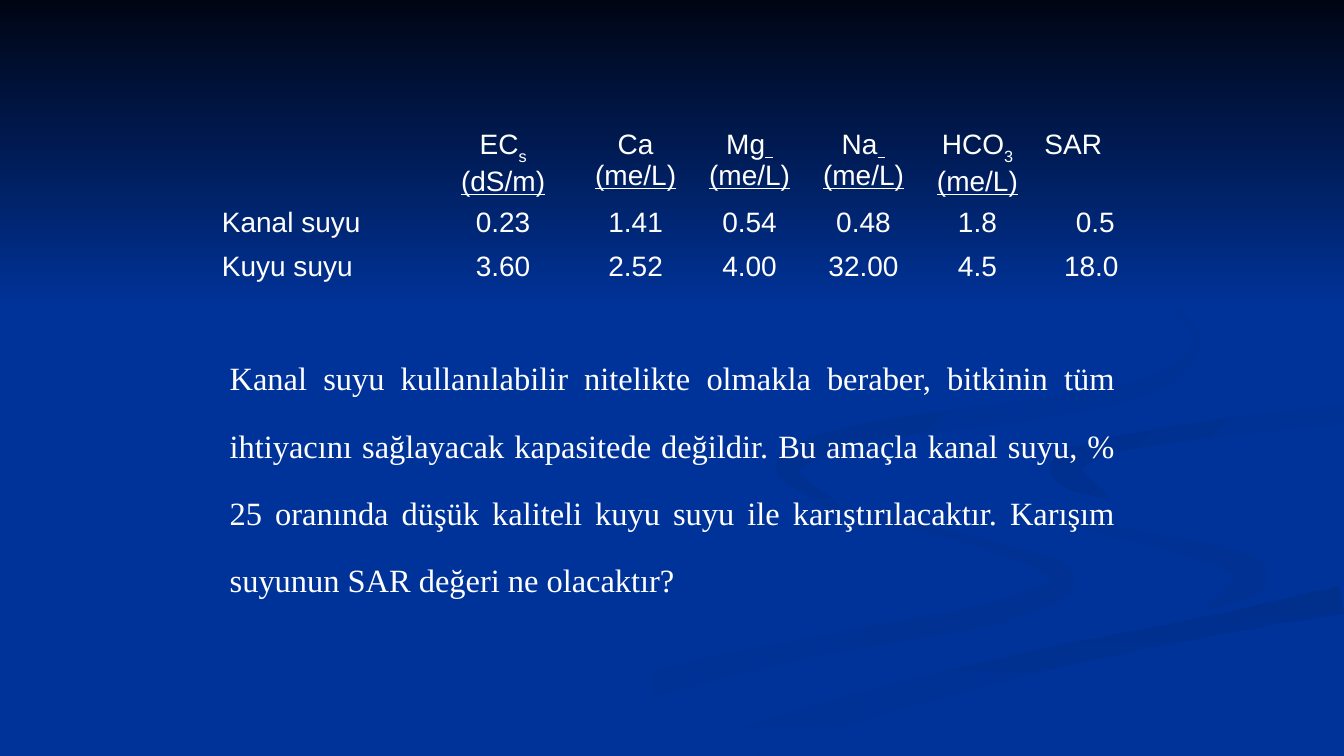
"""Build a slide with a water quality table and a mixing question."""
from dataclasses import dataclass
from math import hypot

from pptx import Presentation
from pptx.dml.color import RGBColor
from pptx.enum.shapes import MSO_SHAPE
from pptx.enum.text import MSO_AUTO_SIZE, PP_ALIGN
from pptx.oxml.ns import qn
from pptx.util import Inches, Pt

LEFT, CENTER, JUSTIFY = PP_ALIGN.LEFT, PP_ALIGN.CENTER, PP_ALIGN.JUSTIFY
RECTANGLE = MSO_SHAPE.RECTANGLE
FIT_SHAPE = MSO_AUTO_SIZE.SHAPE_TO_FIT_TEXT
NO_GRID_STYLE = "{2D5ABB26-0587-4C30-8999-92F81FD0307C}"


@dataclass(frozen=True)
class Theme:
    water: str = "003399"
    shade: str = "003193"
    deep_shade: str = "002F8C"
    night: str = "000514"
    text: str = "FFFFFF"
    table_font: str = "Arial"
    body_font: str = "Times New Roman"
    table_size: int = 20
    body_size: int = 40
    raised: int = 30000
    lowered: int = -30000


@dataclass(frozen=True)
class Stream:
    """A ribbon through knots of (x, y, thickness) in inches."""
    knots: tuple
    start_color: str
    end_color: str
    angle: int


THEME = Theme()

UNITS = "(me/L)"
HEADERS = [
    ("", "", ""),
    ("EC", "s", "(dS/m)"),
    ("Ca", "", UNITS),
    ("Mg", " ", UNITS),
    ("Na", " ", UNITS),
    ("HCO", "3", UNITS),
    ("SAR", "", ""),
]
SAMPLES = [
    ("Kanal suyu", "0.23", "1.41", "0.54", "0.48", "1.8", " 0.5"),
    ("Kuyu suyu", "3.60", "2.52", "4.00", "32.00", "4.5", "18.0"),
]
QUESTION = (
    "Kanal suyu kullanılabilir nitelikte olmakla beraber, bitkinin tüm "
    "ihtiyacını sağlayacak kapasitede değildir. Bu amaçla kanal suyu, % 25 "
    "oranında düşük kaliteli kuyu suyu ile karıştırılacaktır. Karışım "
    "suyunun SAR değeri ne olacaktır?"
)

SLIDE_WIDTH, SLIDE_HEIGHT = 13.33, 7.5
SKY_SHARE = 0.41
COLUMN_WIDTHS = [2.14, 1.5] + [1.13] * 5
ROW_HEIGHTS = [0.77] + [0.43] * 2
TABLE_ORIGIN = (2.1, 1.23)
QUESTION_BOX = (2.18, 3.44, 8.98, 1.9)

LEFT_TO_RIGHT, DIAGONAL, DOWNWARD = 0, 315, 270
STEPS_PER_KNOT = 8
UNITS_PER_INCH = 100

STREAMS = {
    "main": Stream(
        ((13.32, 3.95, 0.15), (11.4, 4.18, 0.13), (10.1, 4.6, 0.7),
         (11.3, 5.13, 0.25), (12.94, 5.6, 0.7), (12, 6.1, 0.1),
         (9.4, 6.6, 0.12), (6.6, 7.45, 0.2)),
        THEME.water, THEME.water, LEFT_TO_RIGHT),
    "lower": Stream(
        ((7.65, 4.62, 0.02), (8.2, 5, 0.06), (9.6, 5.35, 0.08),
         (10.56, 5.72, 0.2), (9.9, 6.07, 0.22), (8.2, 6.39, 0.2),
         (6.65, 6.74, 0.26), (4.41, 7.38, 0.3)),
        THEME.water, THEME.shade, LEFT_TO_RIGHT),
    "right bend": Stream(
        ((9.65, 4.66, 0.02), (10.08, 5.01, 0.06), (11.1, 5.28, 0.13),
         (12.1, 5.52, 0.2), (12.4, 5.75, 0.33), (11.97, 6.04, 0.02)),
        THEME.water, THEME.shade, DIAGONAL),
    "bottom": Stream(
        ((7.17, 7.46, 0.35), (8.4, 7.05, 0.27), (10.2, 6.58, 0.22),
         (12, 6.21, 0.2), (13.31, 5.95, 0.28)),
        THEME.deep_shade, THEME.water, DOWNWARD),
    "upper branch": Stream(
        ((13.31, 4.11, 0.18), (12, 4.26, 0.17), (10.95, 4.44, 0.16),
         (10.57, 4.66, 0.3), (11.01, 4.95, 0.01)),
        THEME.deep_shade, THEME.water, DIAGONAL),
    "spring": Stream(
        ((10.17, 2.33, 0.01), (11.26, 2.77, 0.06), (11.87, 3.36, 0.07),
         (11.4, 3.82, 0.16), (10.2, 4.07, 0.2), (8.6, 4.29, 0.18),
         (7.8, 4.63, 0.22), (8.29, 4.99, 0.01)),
        THEME.deep_shade, THEME.water, DIAGONAL),
}


def color_of(value):
    return RGBColor.from_string(value)


def blend(before, start, end, after, share):
    """Return the Catmull-Rom value between start and end."""
    slope = end - before
    bend = 2 * before - 5 * start + 4 * end - after
    twist = 3 * (start - end) + after - before
    return start + share * (slope + share * (bend + share * twist)) / 2


def smooth(knots):
    """Return evenly stepped points on a curve through all knots."""
    padded = (knots[0], *knots, knots[-1])
    points = [
        tuple(blend(*values, step / STEPS_PER_KNOT) for values in zip(*window))
        for window in zip(padded, padded[1:], padded[2:], padded[3:])
        for step in range(STEPS_PER_KNOT)
    ]
    return points + [knots[-1]]


def ribbon_outline(knots):
    """Return both banks of a ribbon as one closed outline inside the slide."""
    points = smooth(knots)
    neighbours = zip([points[0]] + points, points, points[1:] + [points[-1]])
    left_bank, right_bank = [], []
    for before, (x, y, thickness), after in neighbours:
        run, rise = after[0] - before[0], after[1] - before[1]
        reach = thickness / 2 / hypot(run, rise)
        for bank, side in ((left_bank, reach), (right_bank, -reach)):
            bank_x = min(x + rise * side, SLIDE_WIDTH)
            bank_y = min(y - run * side, SLIDE_HEIGHT)
            bank.append((bank_x * UNITS_PER_INCH, bank_y * UNITS_PER_INCH))
    return left_bank + right_bank[::-1]


def paint(shape, start_color, end_color, angle):
    shape.shadow.inherit = False
    shape.line.fill.background()
    shape.fill.gradient()
    shape.fill.gradient_angle = angle
    for stop, color in zip(shape.fill.gradient_stops, (start_color, end_color)):
        stop.color.rgb = color_of(color)


def draw_backdrop(slide):
    slide.background.fill.solid()
    slide.background.fill.fore_color.rgb = color_of(THEME.water)
    for stream in STREAMS.values():
        first, *others = ribbon_outline(stream.knots)
        builder = slide.shapes.build_freeform(*first, scale=Inches(1) / UNITS_PER_INCH)
        builder.add_line_segments(others, close=True)
        paint(builder.convert_to_shape(), stream.start_color, stream.end_color, stream.angle)
    sky_size = map(Inches, (SLIDE_WIDTH, SLIDE_HEIGHT * SKY_SHARE))
    sky = slide.shapes.add_shape(RECTANGLE, 0, 0, *sky_size)
    paint(sky, THEME.night, THEME.water, DOWNWARD)


def add_run(paragraph, text, font_name, size, baseline=0, underline=False):
    run = paragraph.add_run()
    run.text = text
    run.font.name = font_name
    run.font.size = Pt(size)
    run.font.underline = underline
    run.font.color.rgb = color_of(THEME.text)
    if baseline:
        run._r.get_or_add_rPr().set("baseline", str(baseline))


def add_table_run(paragraph, text, **style):
    add_run(paragraph, text, THEME.table_font, THEME.table_size, **style)


def fill_header(cell, name, suffix, unit):
    paragraph = cell.text_frame.paragraphs[0]
    paragraph.alignment = CENTER if unit else LEFT
    if name:
        add_table_run(paragraph, name)
    if suffix.strip():
        add_table_run(paragraph, suffix, baseline=THEME.lowered)
    elif suffix:
        add_table_run(paragraph, suffix, underline=True)
    if unit:
        unit_paragraph = cell.text_frame.add_paragraph()
        unit_paragraph.alignment = CENTER
        add_table_run(unit_paragraph, unit, underline=True)


def draw_table(slide):
    box = map(Inches, (*TABLE_ORIGIN, sum(COLUMN_WIDTHS), sum(ROW_HEIGHTS)))
    table = slide.shapes.add_table(len(ROW_HEIGHTS), len(COLUMN_WIDTHS), *box).table
    table.first_row = table.horz_banding = False
    table._tbl.tblPr.find(qn("a:tableStyleId")).text = NO_GRID_STYLE
    for column, width in zip(table.columns, COLUMN_WIDTHS):
        column.width = Inches(width)
    for row, height in zip(table.rows, ROW_HEIGHTS):
        row.height = Inches(height)
    for cell in table.iter_cells():
        cell.fill.background()
    for column, header in enumerate(HEADERS):
        fill_header(table.cell(0, column), *header)
    for row, sample in enumerate(SAMPLES, start=1):
        for column, value in enumerate(sample):
            paragraph = table.cell(row, column).text_frame.paragraphs[0]
            paragraph.alignment = CENTER if column else JUSTIFY
            add_table_run(paragraph, value)


def draw_question(slide):
    text_frame = slide.shapes.add_textbox(*map(Inches, QUESTION_BOX)).text_frame
    text_frame.word_wrap = True
    text_frame.auto_size = FIT_SHAPE
    paragraph = text_frame.paragraphs[0]
    paragraph.alignment = JUSTIFY
    add_run(paragraph, QUESTION, THEME.body_font, THEME.body_size, THEME.raised)


def main():
    presentation = Presentation()
    presentation.slide_width = Inches(SLIDE_WIDTH)
    presentation.slide_height = Inches(SLIDE_HEIGHT)
    slide = presentation.slides.add_slide(presentation.slide_layouts[6])
    draw_backdrop(slide)
    draw_table(slide)
    draw_question(slide)
    presentation.save("out.pptx")


if __name__ == "__main__":
    main()
